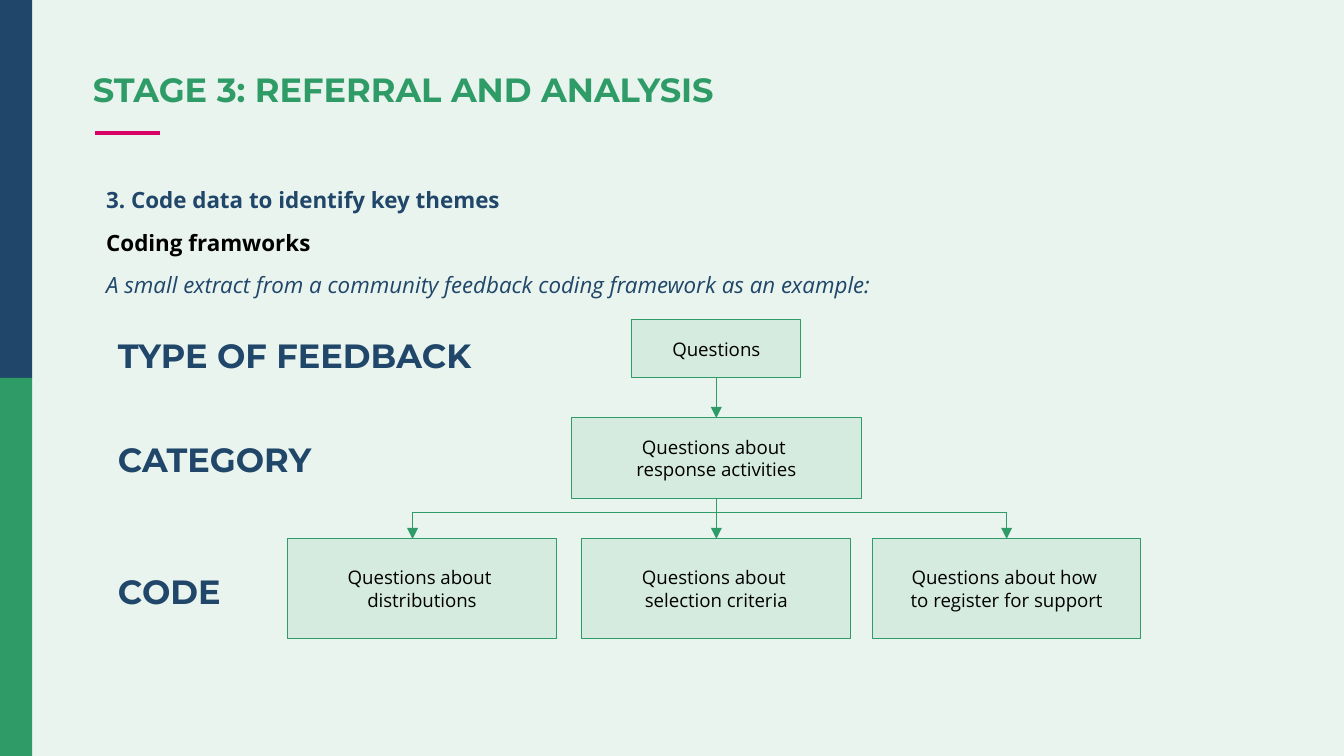
from lxml.etree import SubElement
from pptx import Presentation
from pptx.dml.color import RGBColor
from pptx.enum.shapes import MSO_CONNECTOR, MSO_SHAPE
from pptx.enum.text import MSO_ANCHOR, MSO_AUTO_SIZE, PP_ALIGN
from pptx.oxml.ns import qn
from pptx.util import Inches, Pt

GREEN = RGBColor(0x2F, 0x9C, 0x67)
NAVY = RGBColor(0x20, 0x46, 0x69)
PINK = RGBColor(0xD9, 0x03, 0x68)
BLACK = RGBColor(0, 0, 0)
PALE_GREEN = RGBColor(0xE9, 0xF4, 0xEE)

SLIDE_WIDTH = 10
SLIDE_HEIGHT = SLIDE_WIDTH * 9 / 16

HEADING = {"name": "Montserrat", "size": Pt(18), "bold": True}
BODY = {"name": "Open Sans", "size": Pt(12)}
BOX_TEXT = {"name": "Open Sans", "size": Pt(10)}

TITLE = "STAGE 3: REFERRAL AND ANALYSIS"
INTRODUCTION = [
    ("3. Code data to identify key themes", NAVY, {"bold": True}),
    ("Coding framworks", BLACK, {"bold": True}),
    ("A small extract from a community feedback coding framework as an example:",
     NAVY, {"italic": True}),
]
LEVELS = [("TYPE OF FEEDBACK", 2.44, 2.93), ("CATEGORY", 3.22, 1.73), ("CODE", 4.2, 1.04)]
TYPE_BOX = ("Questions", 4.7, 2.38, 1.26, 0.43)
CATEGORY_BOX = ("Questions about \vresponse activities", 4.25, 3.11, 2.16, 0.6)
CODES = [
    ("Questions about \vdistributions", 2.14),
    ("Questions about \vselection criteria", 4.33),
    ("Questions about how \vto register for support", 6.49),
]
CODE_TOP, CODE_WIDTH, CODE_HEIGHT = 4.01, 2, 0.74
BRANCH_Y = 3.81
STEM_X, LEFT_BRANCH_X, RIGHT_BRANCH_X = 5.33, 3.07, 7.49


def style(font, color, formats):
    for name, value in formats.items():
        setattr(font, name, value)
    font.color.rgb = color


def place(shape, left, top, width, height):
    shape.left, shape.top = Inches(left), Inches(top)
    shape.width, shape.height = Inches(width), Inches(height)


def add_rectangle(slide, left, top, width, height, color):
    box = slide.shapes.add_shape(
        MSO_SHAPE.RECTANGLE, Inches(left), Inches(top), Inches(width), Inches(height))
    box.shadow.inherit = False
    box.fill.solid()
    box.fill.fore_color.rgb = color
    box.line.fill.background()
    return box


def add_tree_box(slide, text, left, top, width, height):
    box = add_rectangle(slide, left, top, width, height, GREEN)
    color = box._element.spPr.find(qn("a:solidFill"))[0]
    SubElement(color, qn("a:alpha"), val="10000")
    box.line.color.rgb = GREEN
    box.line.width = Pt(0.5)
    frame = box.text_frame
    frame.word_wrap = True
    frame.vertical_anchor = MSO_ANCHOR.MIDDLE
    para = frame.paragraphs[0]
    para.text = text
    para.alignment = PP_ALIGN.CENTER
    for span in para.runs:
        style(span.font, BLACK, BOX_TEXT)
    return box


def add_line(slide, start, end, color=GREEN, width=0.5, arrow=False):
    line = slide.shapes.add_connector(
        MSO_CONNECTOR.STRAIGHT, *(Inches(value) for value in (*start, *end)))
    line.line.color.rgb = color
    line.line.width = Pt(width)
    if arrow:
        outline = line._element.spPr.find(qn("a:ln"))
        SubElement(outline, qn("a:tailEnd"), type="triangle")
    SubElement(line._element.spPr, qn("a:effectLst"))
    return line


def add_title(slide):
    title = slide.shapes.title
    place(title, 0.69, 0.5, 8.62, 0.37)
    frame = title.text_frame
    frame.margin_left = 0
    frame.auto_size = MSO_AUTO_SIZE.NONE
    frame.vertical_anchor = MSO_ANCHOR.TOP
    para = frame.paragraphs[0]
    para.text = TITLE
    para.alignment = PP_ALIGN.LEFT
    para.line_spacing = 0.9
    style(para.runs[0].font, GREEN, HEADING)


def add_introduction(slide):
    body = slide.placeholders[1]
    place(body, 0.69, 1.32, 8.62, 3.57)
    frame = body.text_frame
    frame.auto_size = MSO_AUTO_SIZE.NONE
    for index, (text, color, emphasis) in enumerate(INTRODUCTION):
        para = frame.add_paragraph() if index else frame.paragraphs[0]
        properties = para._p.get_or_add_pPr()
        properties.set("marL", "0")
        properties.set("indent", "0")
        SubElement(properties, qn("a:buNone"))
        para.line_spacing = Pt(15.4)
        para.space_before = Pt(7.5 if index else 0)
        span = para.add_run()
        span.text = text
        style(span.font, color, {**BODY, **emphasis})


def add_levels(slide):
    for text, top, width in LEVELS:
        label = slide.shapes.add_textbox(
            Inches(0.78), Inches(top), Inches(width), Inches(0.4))
        label.text_frame.word_wrap = False
        para = label.text_frame.paragraphs[0]
        para.text = text
        style(para.runs[0].font, NAVY, HEADING)


def add_tree(slide):
    type_box = add_tree_box(slide, *TYPE_BOX)
    category_box = add_tree_box(slide, *CATEGORY_BOX)
    code_boxes = [add_tree_box(slide, text, left, CODE_TOP, CODE_WIDTH, CODE_HEIGHT)
                  for text, left in CODES]

    arrow = add_line(slide, (STEM_X, 2.81), (STEM_X, 3.11), arrow=True)
    arrow.begin_connect(type_box, 2)
    arrow.end_connect(category_box, 0)

    stem = add_line(slide, (STEM_X, 3.71), (STEM_X, BRANCH_Y), width=0.75)
    stem.begin_connect(category_box, 2)
    add_line(slide, (LEFT_BRANCH_X, BRANCH_Y), (RIGHT_BRANCH_X, BRANCH_Y))

    add_line(slide, (LEFT_BRANCH_X, BRANCH_Y), (LEFT_BRANCH_X, CODE_TOP), arrow=True)
    for branch_x, box in zip((STEM_X, RIGHT_BRANCH_X), code_boxes[1:]):
        branch = add_line(slide, (branch_x, BRANCH_Y), (branch_x, CODE_TOP), arrow=True)
        branch.end_connect(box, 0)


def main():
    deck = Presentation()
    deck.slide_width, deck.slide_height = Inches(SLIDE_WIDTH), Inches(SLIDE_HEIGHT)
    slide = deck.slides.add_slide(deck.slide_layouts[1])
    slide.background.fill.solid()
    slide.background.fill.fore_color.rgb = PALE_GREEN

    half_height = SLIDE_HEIGHT / 2
    for index, color in enumerate((NAVY, GREEN)):
        add_rectangle(slide, 0, index * half_height, 0.24, half_height, color)
    add_line(slide, (0.71, 0.99), (1.19, 0.99), PINK, 2.25)
    add_title(slide)
    add_introduction(slide)
    add_tree(slide)
    add_levels(slide)
    deck.save("out.pptx")


if __name__ == "__main__":
    main()
